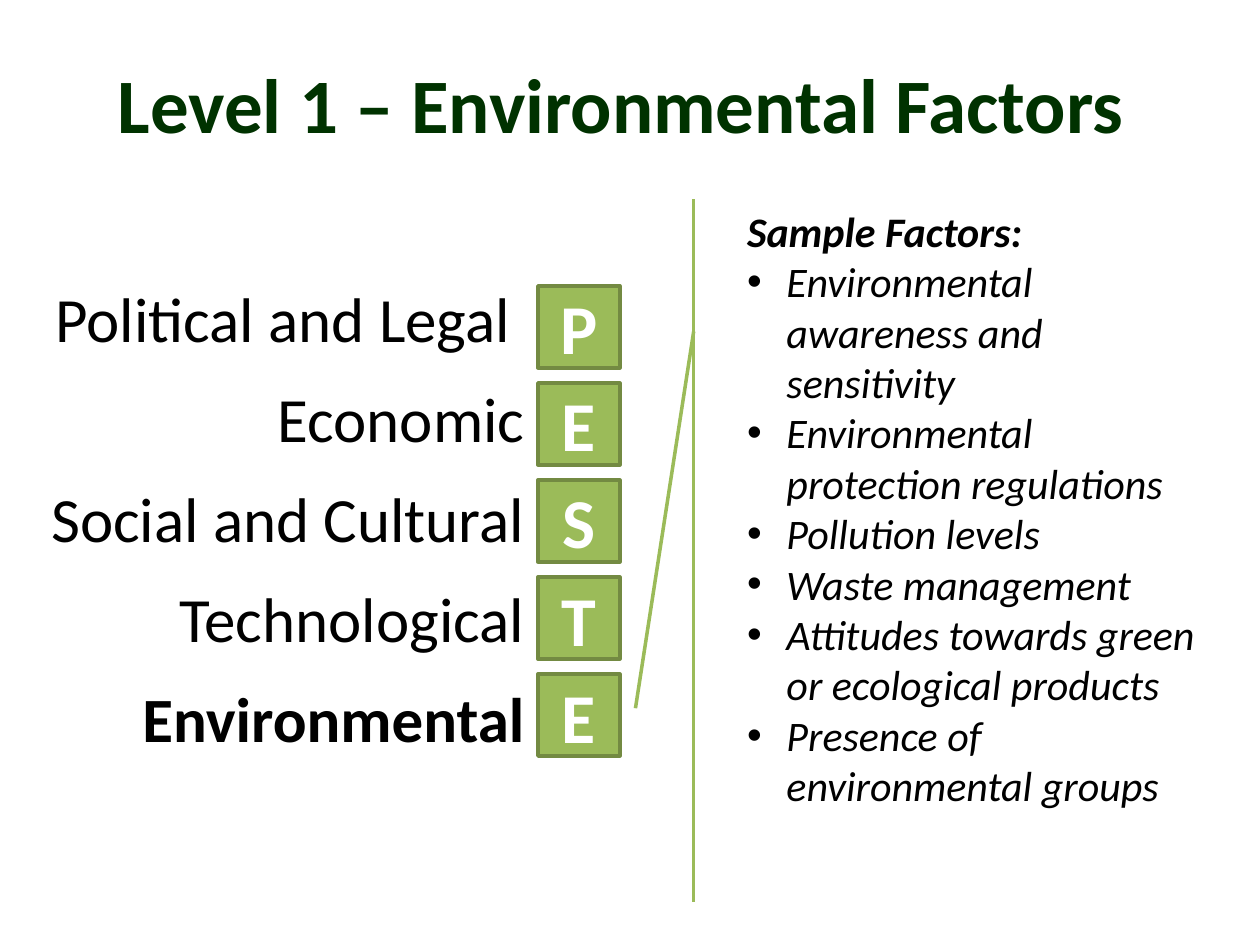
"""Build the PESTE slide on environmental factors."""
from lxml.etree import SubElement
from pptx import Presentation
from pptx.dml.color import RGBColor
from pptx.enum.shapes import MSO_SHAPE
from pptx.enum.text import MSO_ANCHOR, PP_ALIGN
from pptx.oxml.ns import qn
from pptx.util import Pt

COLORS = {
    "title": "003200",
    "text": "000000",
    "white": "FFFFFF",
    "green": "9BBB59",
    "border": "738A42",
}
CATEGORIES = ["Political and Legal ", "Economic", "Social and Cultural",
              "Technological", "Environmental"]
FACTORS = [
    "Environmental awareness and sensitivity",
    "Environmental protection regulations",
    "Pollution levels",
    "Waste management",
    "Attitudes towards green or ecological products",
    "Presence of environmental groups",
]


def rgb(name):
    return RGBColor.from_string(COLORS[name])


def add_run(p, text, size, color="text", bold=False, italic=False):
    r = p.add_run()
    r.text = text
    r.font.name = "Calibri"
    r.font.size = Pt(size)
    r.font.bold = bold
    r.font.italic = italic
    r.font.color.rgb = rgb(color)


def next_paragraph(tf, index, align):
    p = tf.add_paragraph() if index else tf.paragraphs[0]
    p.alignment = align
    return p


def set_bullet(p, indent):
    pPr = p._p.get_or_add_pPr()
    pPr.set("marL", str(Pt(indent)))
    pPr.set("indent", str(-Pt(indent)))
    SubElement(pPr, qn("a:buFont")).set("typeface", "Arial")
    SubElement(pPr, qn("a:buChar")).set("char", "•")


def add_shape(s, kind, box, fill, line):
    sp = s.shapes.add_shape(kind, *map(Pt, box))
    sp.shadow.inherit = False
    sp.fill.solid()
    sp.fill.fore_color.rgb = rgb(fill)
    sp.line.color.rgb = rgb(line)
    sp.line.width = Pt(2)
    return sp


def add_title(s, text):
    sp = s.shapes.title
    sp.left, sp.top, sp.width, sp.height = map(Pt, (36, 21.6, 648, 74.2))
    tf = sp.text_frame
    tf.vertical_anchor = MSO_ANCHOR.MIDDLE
    p = next_paragraph(tf, 0, PP_ALIGN.CENTER)
    add_run(p, text, 44, "title", bold=True)


def add_callout(s, heading, factors):
    box = (419.8, 113.8, 282.2, 401.8)
    sp = add_shape(s, MSO_SHAPE.LINE_CALLOUT_1_ACCENT_BAR, box, "white", "green")
    for i, value in enumerate((0.188, -0.083, 0.724, -0.201)):
        sp.adjustments[i] = value
    tf = sp.text_frame
    tf.word_wrap = True
    tf.vertical_anchor = MSO_ANCHOR.TOP
    for i, text in enumerate([heading, *factors]):
        p = next_paragraph(tf, i, PP_ALIGN.LEFT)
        if i:
            set_bullet(p, 22.5)
        add_run(p, text, 24, bold=i == 0, italic=True)


def add_categories(s, names, current):
    tf = s.shapes.add_textbox(*map(Pt, (5.8, 156.2, 301, 251.3))).text_frame
    tf.word_wrap = True
    for i, name in enumerate(names):
        p = next_paragraph(tf, i, PP_ALIGN.RIGHT)
        if i:
            p.space_before = Pt(14)
        add_run(p, name, 36, bold=name == current)


def add_letter(s, letter, top):
    sp = add_shape(s, MSO_SHAPE.RECTANGLE, (307.4, top, 46.8, 46.8),
                   "green", "border")
    tf = sp.text_frame
    tf.word_wrap = False
    tf.vertical_anchor = MSO_ANCHOR.MIDDLE
    p = next_paragraph(tf, 0, PP_ALIGN.CENTER)
    add_run(p, letter, 40, "white", bold=True)


def main():
    prs = Presentation()
    prs.slide_width, prs.slide_height = Pt(720), Pt(540)
    s = prs.slides.add_slide(prs.slide_layouts[5])
    add_title(s, "Level 1 – Environmental Factors ")
    add_callout(s, "Sample Factors:", FACTORS)
    add_categories(s, CATEGORIES, "Environmental")
    for i, name in enumerate(CATEGORIES):
        add_letter(s, name[0], 163.4 + i * 55.45)
    prs.save("out.pptx")


if __name__ == "__main__":
    main()
